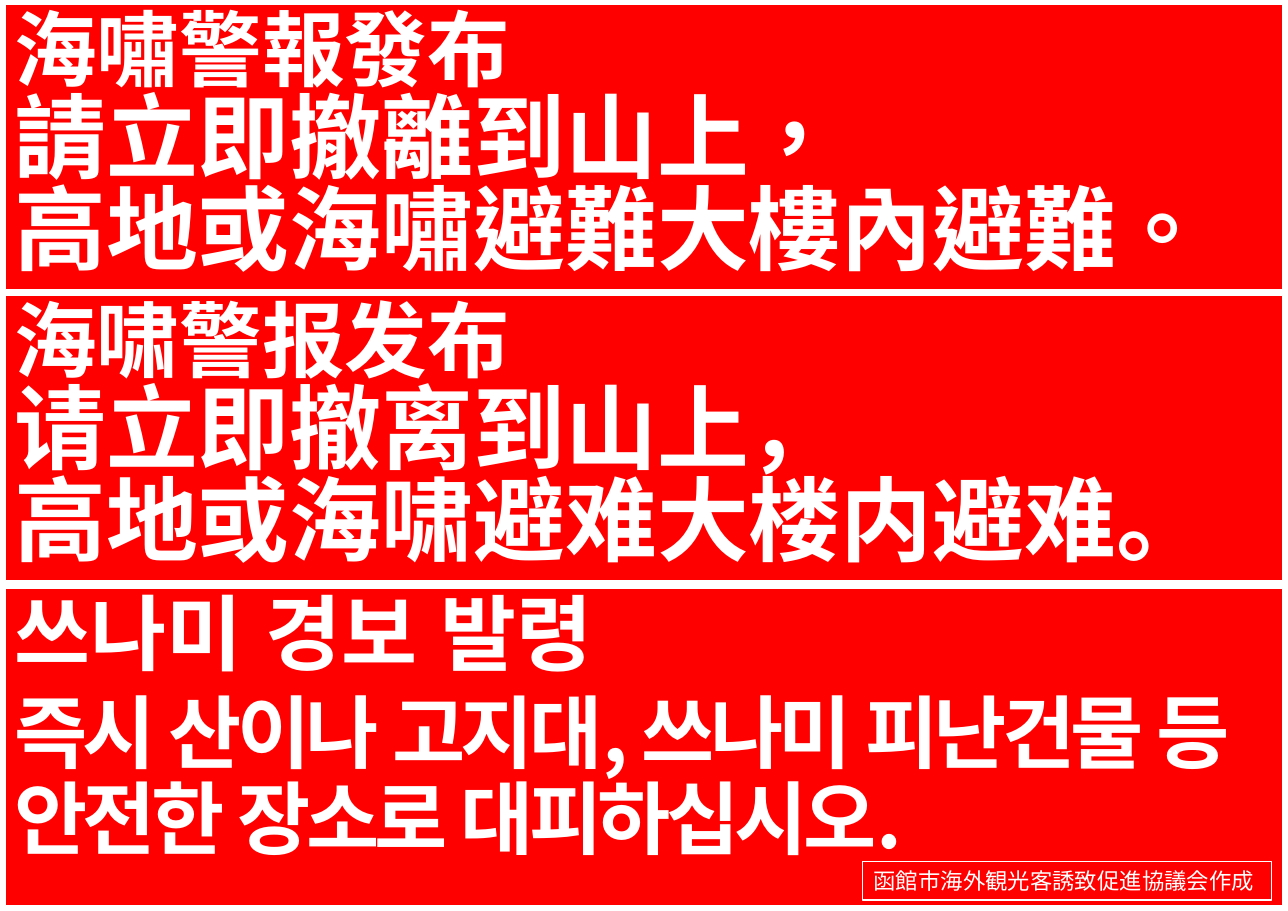
from dataclasses import dataclass

from pptx import Presentation
from pptx.dml.color import RGBColor
from pptx.enum.lang import MSO_LANGUAGE_ID
from pptx.enum.shapes import MSO_SHAPE
from pptx.enum.text import MSO_ANCHOR, PP_ALIGN
from pptx.util import Pt

RECT = MSO_SHAPE.RECTANGLE
TOP, MIDDLE = MSO_ANCHOR.TOP, MSO_ANCHOR.MIDDLE
LEFT = PP_ALIGN.LEFT
TAIWAN = MSO_LANGUAGE_ID.TRADITIONAL_CHINESE
CHINA = MSO_LANGUAGE_ID.SIMPLIFIED_CHINESE
KOREA = MSO_LANGUAGE_ID.KOREAN
JAPAN = MSO_LANGUAGE_ID.JAPANESE
PX = 9144


@dataclass(frozen=True)
class Theme:
    red: RGBColor = RGBColor(255, 0, 0)
    white: RGBColor = RGBColor(255, 255, 255)
    warning_font: str = "Noto Sans CJK JP"
    credit_font: str = "Calibri"
    heading: float = 54
    chinese: float = 60
    korean: float = 52
    credit: float = 14.6
    border: float = 0.75


THEME = Theme()


def add_box(s, box, inset, anchor):
    sp = s.shapes.add_shape(RECT, *(v * PX for v in box))
    sp.shadow.inherit = False
    sp.line.color.rgb = THEME.white
    sp.line.width = Pt(THEME.border)
    tf = sp.text_frame
    tf.word_wrap = True
    tf.vertical_anchor = anchor
    tf.margin_left = tf.margin_right = inset[0] * PX
    tf.margin_top = tf.margin_bottom = inset[1] * PX
    return sp


def write(p, text, size, font, language, bold=False):
    p.alignment = LEFT
    p.font.size = Pt(size)
    p.font.name = font
    p.font.bold = bold
    p.font.color.rgb = THEME.white
    r = p.add_run()
    r.text = text
    r.font.language_id = language
    return r


def add_warning(s, box, heading, lines, language, size, spacing, before, tracking=0):
    sp = add_box(s, box, (8, 4), TOP)
    sp.fill.solid()
    sp.fill.fore_color.rgb = THEME.red
    tf = sp.text_frame
    p = tf.paragraphs[0]
    p.line_spacing = 0.9
    write(p, heading, THEME.heading, THEME.warning_font, language, True)
    for line in lines:
        p = tf.add_paragraph()
        p.line_spacing = spacing
        p.space_before = Pt(before)
        r = write(p, line, size, THEME.warning_font, language, True)
        if tracking:
            r._r.get_or_add_rPr().set("spc", str(tracking * 100))


def add_credit(s, box, text):
    sp = add_box(s, box, (10, 5), MIDDLE)
    sp.fill.background()
    write(sp.text_frame.paragraphs[0], text, THEME.credit, THEME.credit_font, JAPAN)


def main():
    prs = Presentation()
    prs.slide_width, prs.slide_height = 1169 * PX, 827 * PX
    s = prs.slides.add_slide(prs.slide_layouts[6])
    chinese = [
        ("海嘯警報發布", ["請立即撤離到山上，", "高地或海嘯避難大樓內避難。"], TAIWAN),
        ("海啸警报发布", ["请立即撤离到山上，", "高地或海啸避难大楼内避难。"], CHINA),
    ]
    for i, (heading, lines, language) in enumerate(chinese):
        add_warning(s, (5, 4 + 264 * i, 1159, 259), heading, lines, language,
                    THEME.chinese, Pt(50), 10)
    add_warning(s, (5, 534, 1159, 288), "쓰나미 경보 발령",
                ["즉시 산이나 고지대, 쓰나미 피난건물 등 안전한 장소로 대피하십시오."],
                KOREA, THEME.korean, 0.9, 8, -3)
    add_credit(s, (783, 782, 371, 35), "函館市海外観光客誘致促進協議会作成")
    prs.save("out.pptx")


if __name__ == "__main__":
    main()
